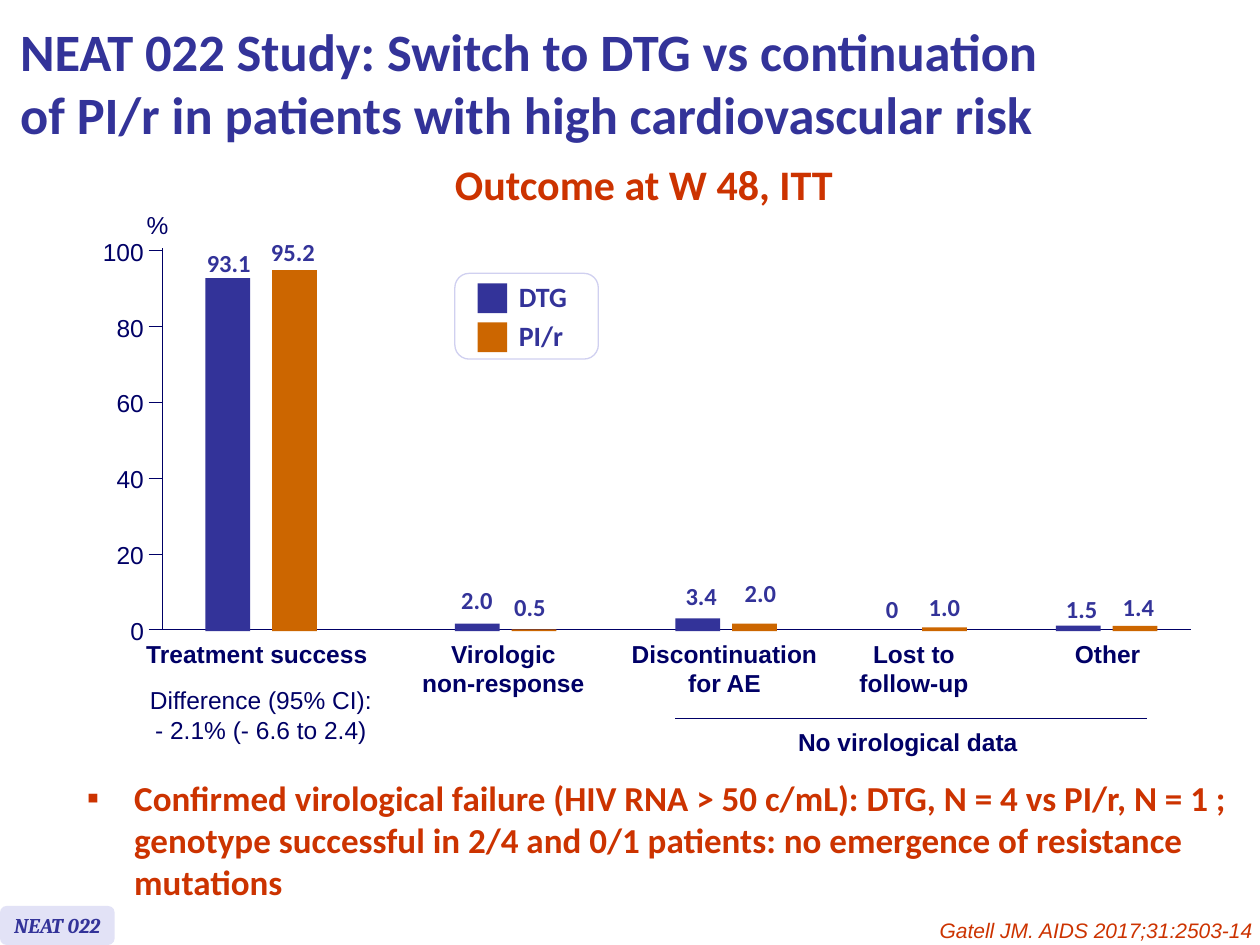
import pptx
import pptx.util
import pptx.dml.color
import pptx.enum.shapes
import pptx.enum.text
import pptx.oxml
import pptx.oxml.ns
from lxml import etree

Pt = pptx.util.Pt
SHAPES = pptx.enum.shapes.MSO_SHAPE
ALIGN = pptx.enum.text.PP_ALIGN
MIDDLE = pptx.enum.text.MSO_ANCHOR.MIDDLE

COLORS = {"blue": "333399", "navy": "000066", "orange": "CC6600", "red": "CC3300",
          "white": "FFFFFF", "border": "D0D0F0", "badge": "E2E2F6"}

TITLE = {"name": "Calibri", "size": Pt(30), "bold": True, "color": "blue"}
SUBTITLE = {"name": "Calibri", "size": Pt(24), "bold": True, "color": "red"}
FINDING = {"name": "Calibri", "size": Pt(20), "bold": True, "color": "red"}
LEGEND = {"name": "Calibri", "size": Pt(16), "bold": True, "color": "blue"}
VALUE = {"name": "Calibri", "size": Pt(14), "bold": True, "color": "blue"}
AXIS = {"name": "Arial", "size": Pt(14), "bold": False, "color": "navy"}
CATEGORY = {**AXIS, "bold": True}
BADGE = {"name": "Cambria", "size": Pt(12), "bold": True, "italic": True, "color": "blue"}
CITATION = {"name": "Arial", "size": Pt(12), "italic": True, "color": "red"}

# Category: label, label left, label width, then per arm
# (value shown, bar left, value label left, value label top)
OUTCOMES = [
    ("Treatment success", -16.6, 141,
     [("93.1", 24.5, 18, -5.1), ("95.2", 62.6, 54.7, -11.5)]),
    ("Virologic\nnon-response", 141.1, 107.3,
     [("2.0", 167, 163.4, 187.2), ("0.5", 199.4, 193.7, 191.5)]),
    ("Discontinuation\nfor AE", 260.6, 121,
     [("3.4", 293, 291.6, 185), ("2.0", 325.4, 325.4, 183.6)]),
    ("Lost to\nfollow-up", 390.9, 77,
     [("0", 401.7, 406.1, 192.9), ("1.0", 434.1, 430.5, 191.5)]),
    ("Other", 514.1, 51.8,
     [("1.5", 510.5, 509, 192.9), ("1.4", 542.9, 541.4, 191.5)]),
]
ARMS = [("DTG", "blue"), ("PI/r", "orange")]
VALUE_WIDTHS = {1: 21.6, 3: 32.4, 4: 39.6}
BAR_WIDTH = 25.6
LINE_HEIGHT = 24.5


def rgb(color):
    return pptx.dml.color.RGBColor.from_string(COLORS[color])


def write(frame, text, style, align=ALIGN.CENTER, wrap=False):
    frame.text = text
    frame.word_wrap = wrap
    for paragraph in frame.paragraphs:
        paragraph.alignment = align
        for run in paragraph.runs:
            for attribute, setting in style.items():
                if attribute == "color":
                    run.font.color.rgb = rgb(setting)
                else:
                    setattr(run.font, attribute, setting)


def add_text(slide, box, text, style, align=ALIGN.CENTER, wrap=False):
    frame = slide.shapes.add_textbox(*map(Pt, box)).text_frame
    write(frame, text, style, align, wrap)
    return frame


def add_block(slide, box, fill, border=None, kind=SHAPES.RECTANGLE):
    block = slide.shapes.add_shape(kind, *map(Pt, box))
    block.shadow.inherit = False
    block.fill.solid()
    block.fill.fore_color.rgb = rgb(fill)
    if border:
        block.line.color.rgb = rgb(border)
        block.line.width = Pt(0.75)
    else:
        block.line.fill.background()
    return block


def place(placeholder, box):
    for side, length in zip(("left", "top", "width", "height"), box):
        setattr(placeholder, side, Pt(length))


def add_title(slide, box):
    title = slide.shapes.title
    place(title, box)
    write(title.text_frame, "NEAT 022 Study: Switch to DTG vs continuation\v"
          "of PI/r in patients with high cardiovascular risk", TITLE, ALIGN.LEFT, True)
    title.text_frame.vertical_anchor = MIDDLE
    title.text_frame.auto_size = pptx.enum.text.MSO_AUTO_SIZE.NONE


def add_subtitle(slide, box):
    frame = add_text(slide, box, "Outcome at W 48, ITT", SUBTITLE, wrap=True)
    frame.paragraphs[0].line_spacing = Pt(15.2)


def add_finding(slide, box):
    body = slide.placeholders[1]
    place(body, box)
    frame = body.text_frame
    write(frame, "Confirmed virological failure (HIV RNA > 50 c/mL): DTG, N = 4 vs PI/r, "
          "N = 1 ; genotype successful in 2/4 and 0/1 patients: no emergence of "
          "resistance mutations", FINDING, ALIGN.LEFT, True)
    frame.auto_size = pptx.enum.text.MSO_AUTO_SIZE.NONE
    paragraph = frame.paragraphs[0]
    properties = paragraph._p.get_or_add_pPr()
    properties.set("marL", str(Pt(27)))
    properties.set("indent", str(-Pt(27)))
    qn = pptx.oxml.ns.qn
    bullet_color = etree.SubElement(properties, qn("a:buClr"))
    etree.SubElement(bullet_color, qn("a:srgbClr")).set("val", COLORS["red"])
    etree.SubElement(properties, qn("a:buFont")).set("typeface", "Arial")
    etree.SubElement(properties, qn("a:buChar")).set("char", "▪")
    paragraph.space_before = Pt(0)


def add_axes(slide, box):
    left, top, width, height = box
    base = top + height
    ticks = [(percent, base - height * percent / 100) for percent in range(0, 101, 20)]

    # Both axes and the tick marks in one outline
    outline = slide.shapes.build_freeform(Pt(left + width), Pt(base), scale=1.0)
    outline.add_line_segments([(Pt(left), Pt(base)), (Pt(left), Pt(top - 1.5))], close=False)
    for _, y in ticks:
        outline.move_to(Pt(left - 7.9), Pt(y))
        outline.add_line_segments([(Pt(left), Pt(y))], close=False)
    axes = outline.convert_to_shape()
    axes.shadow.inherit = False
    axes.fill.background()
    axes.line.color.rgb = rgb("navy")
    axes.line.width = Pt(0.63)

    # Scale labels, right-aligned beside the ticks
    for percent, y in ticks:
        label_width = 14.4 + 7.9 * len(str(percent))
        add_text(slide, (left - 3.6 - label_width, y - 11.5, label_width, LINE_HEIGHT),
                 str(percent), AXIS, ALIGN.RIGHT)
    add_text(slide, (left - 16.6, top - 26.7, 27.4, LINE_HEIGHT), "%", AXIS)


def add_outcomes(slide, box):
    left, top, width, height = box
    base = top + height
    for category, label_left, label_width, results in OUTCOMES:
        for (_, color), (value, bar_left, value_left, value_top) in zip(ARMS, results):
            bar_height = height * float(value) / 100
            if bar_height:
                add_block(slide, (left + bar_left, base + 0.7 - bar_height,
                                  BAR_WIDTH, bar_height), color)
            add_text(slide, (left + value_left, top + value_top,
                             VALUE_WIDTHS[len(value)], LINE_HEIGHT), value, VALUE)
        label_height = LINE_HEIGHT + 16.5 * category.count("\n")
        add_text(slide, (left + label_left, base + 1.4, label_width, label_height),
                 category, CATEGORY)


def add_annotations(slide, box):
    left, top, width, height = box
    base = top + height
    add_text(slide, (left - 15.1, base + 28.1, 142.6, 41),
             "Difference (95% CI):\v- 2.1% (- 6.6 to 2.4)", AXIS)

    # Rule joining the last three categories
    rule_y = Pt(base + 50.4)
    rule = slide.shapes.add_connector(pptx.enum.shapes.MSO_CONNECTOR.STRAIGHT,
                                      Pt(left + 293), rule_y, Pt(left + 562.3), rule_y)
    rule.line.color.rgb = rgb("navy")
    rule.line.width = Pt(0.75)
    etree.SubElement(rule._element.spPr, pptx.oxml.ns.qn("a:effectLst"))
    add_text(slide, (left + 355.7, base + 51.8, 140.4, LINE_HEIGHT),
             "No virological data", CATEGORY)


def add_legend(slide, box):
    left, top, width, height = box
    add_block(slide, box, "white", "border", SHAPES.ROUNDED_RECTANGLE)
    for row, (arm, color) in enumerate(ARMS):
        y = top + 22.3 * row
        add_block(slide, (left + 13, y + 5.8, 17, 17), color)
        add_text(slide, (left + 29.5, y, 42, 26.6), arm, LEGEND, ALIGN.LEFT)


def add_footer(slide, box):
    left, top, width, height = box
    badge = add_block(slide, (left, top, 65.5, height), "badge",
                      kind=SHAPES.ROUNDED_RECTANGLE)
    write(badge.text_frame, "NEAT 022", BADGE)
    badge.text_frame.vertical_anchor = MIDDLE
    add_text(slide, (left + width - 249, top + 2.9, 252, 21.6),
             "Gatell JM. AIDS 2017;31:2503-14", CITATION, ALIGN.RIGHT, True)


def main():
    deck = pptx.Presentation()
    deck.slide_width, deck.slide_height = Pt(720), Pt(540)
    slide = deck.slides.add_slide(deck.slide_layouts[1])
    plot = (92.9, 143.3, 587.5, 216.7)

    add_title(slide, (4.3, 3.6, 645, 87))
    add_subtitle(slide, (15.8, 100.8, 704.2, 25.2))
    add_axes(slide, plot)
    add_outcomes(slide, plot)
    add_annotations(slide, plot)
    add_legend(slide, (259.9, 156.2, 82, 49))
    add_finding(slide, (42.5, 440, 672.5, 80))
    add_footer(slide, (0, 517.7, 720, 22.3))
    deck.save("out.pptx")


if __name__ == "__main__":
    main()
